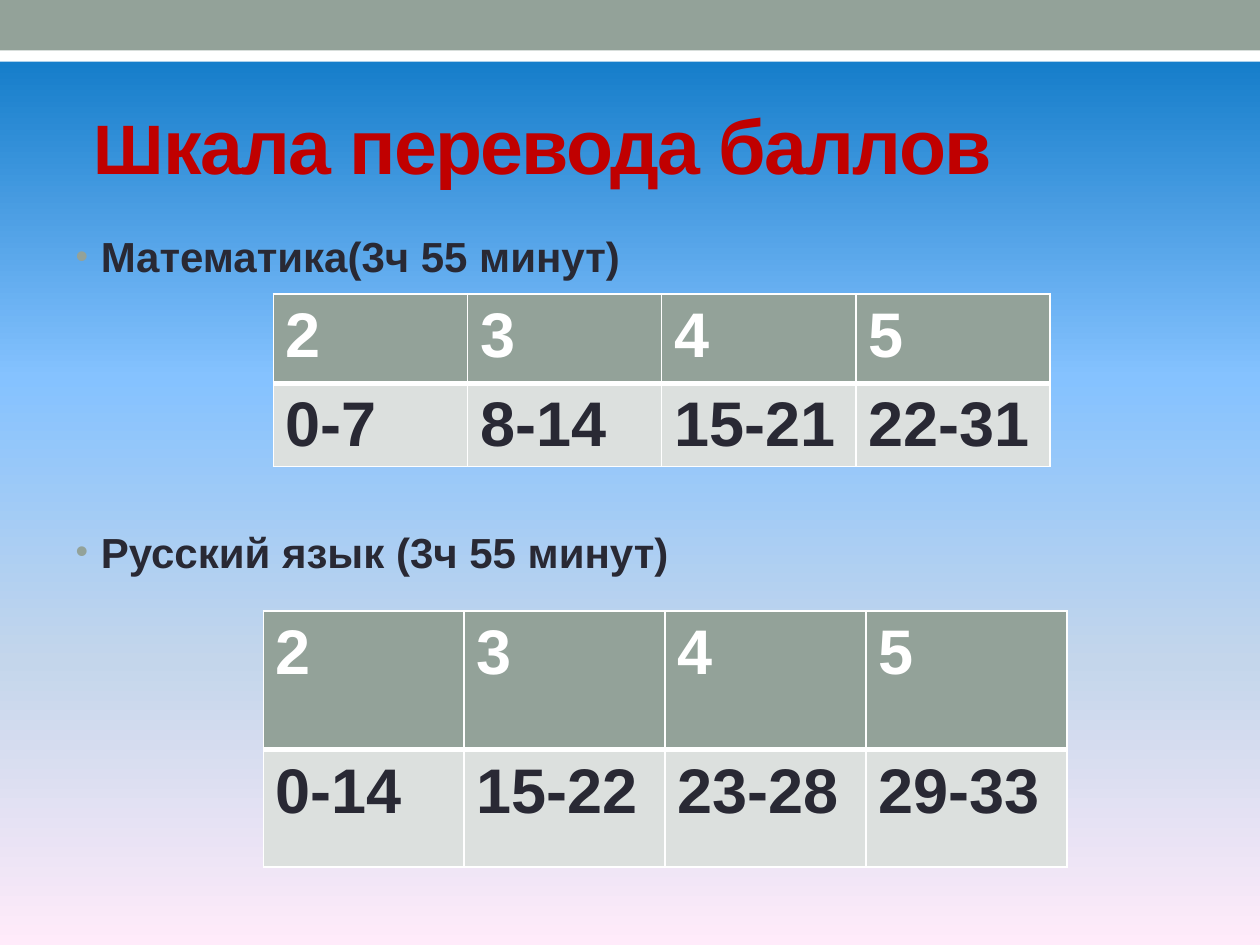
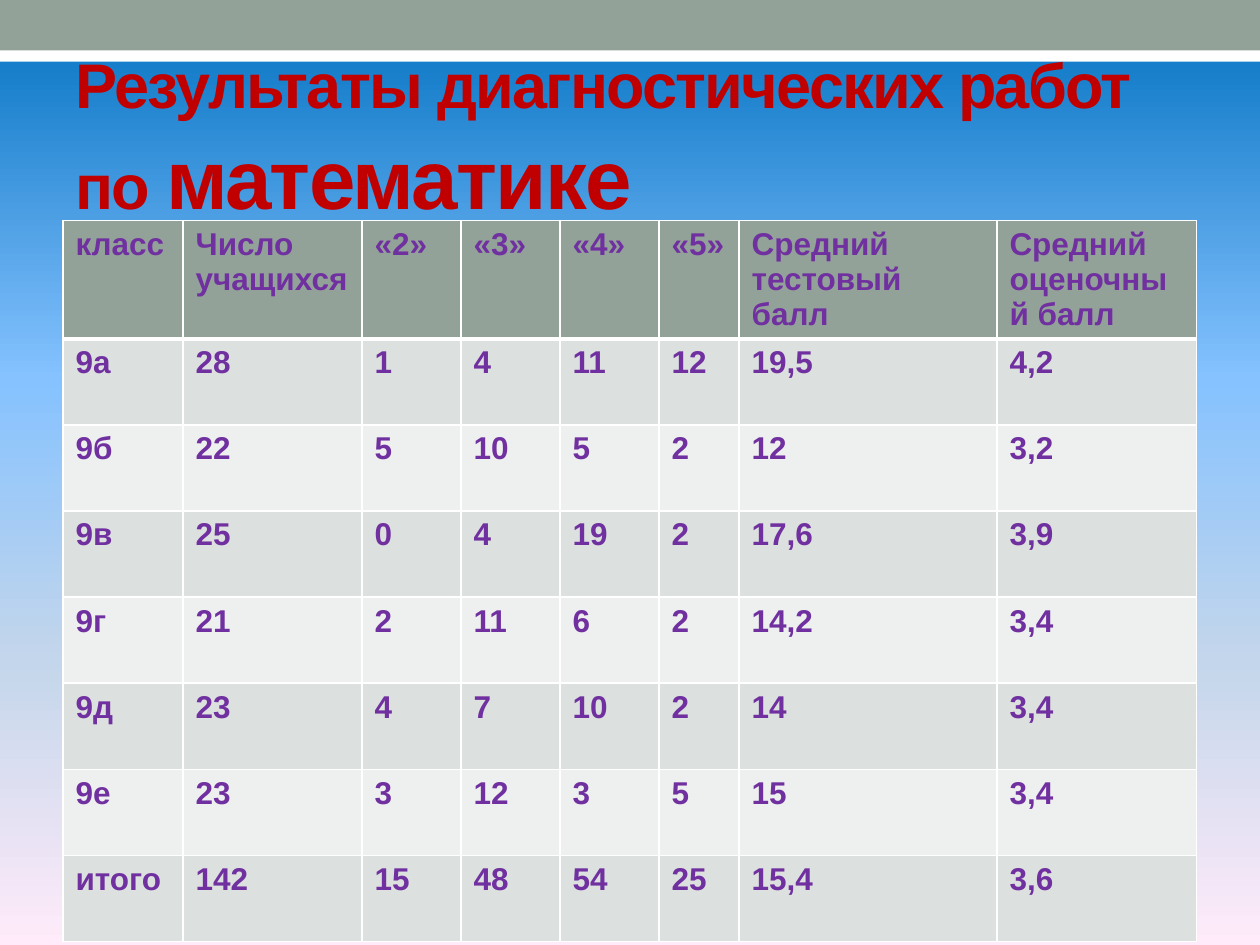
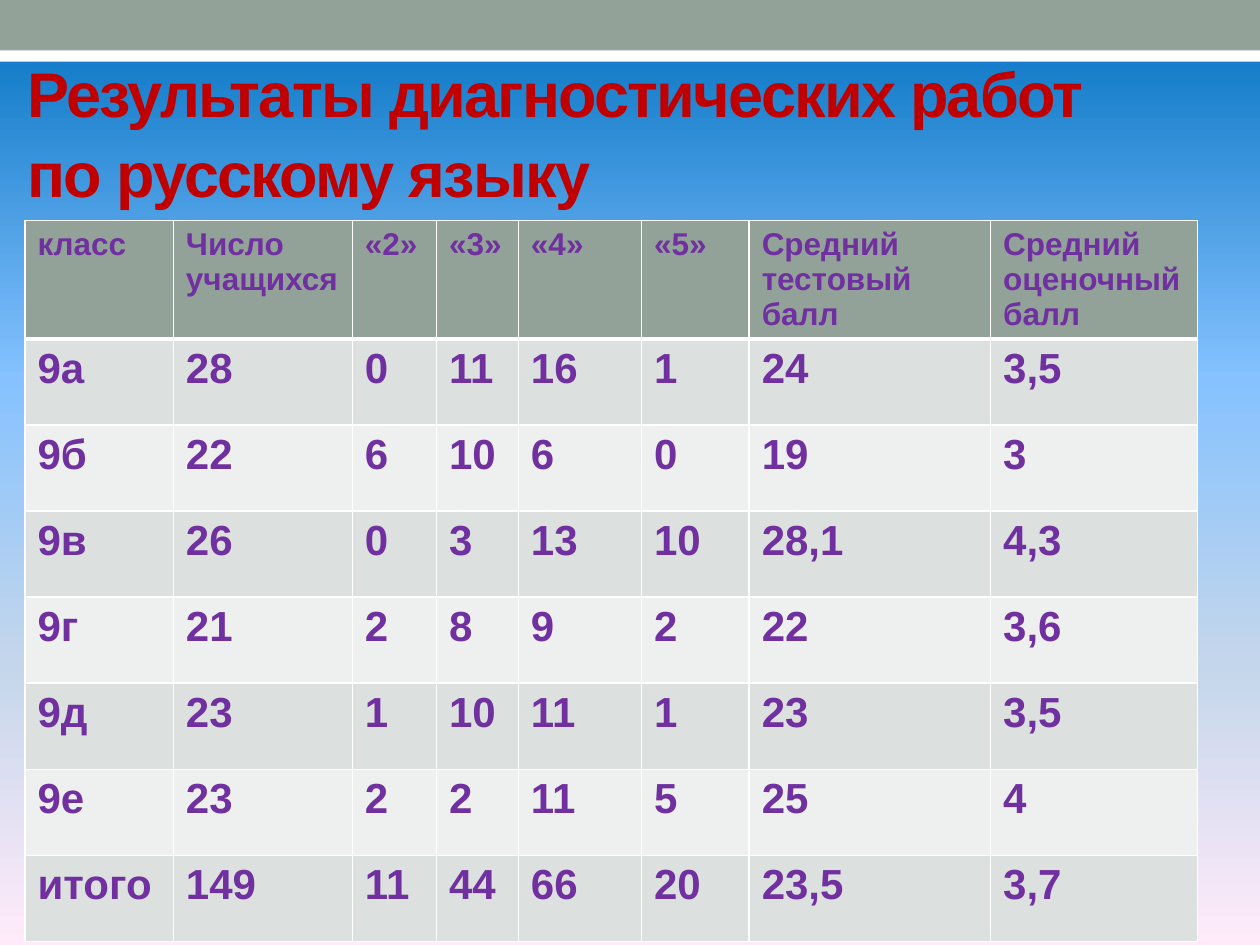
from copy import deepcopy

from lxml.etree import SubElement
from pptx import Presentation
from pptx.dml.color import RGBColor
from pptx.enum.shapes import MSO_SHAPE as Shape
from pptx.enum.text import MSO_ANCHOR as Anchor, MSO_AUTO_SIZE as AutoSize, PP_ALIGN as Align
from pptx.oxml.ns import qn
from pptx.util import Pt

FONT = "Arial"
SAGE, WHITE, RED, DARK, PURPLE = "93A299", "FFFFFF", "C00000", "292934", "7030A0"
BAND_FILLS = ("EEF0EF", "DCE0DE")
BACKGROUND_STOPS = ((0, "0070C0"), (40, "85C2FF"), (70, "C4D6EB"), (100, "FFEBFA"))
TITLE_ONLY, TITLE_AND_BODY = 5, 1

RESULT_HEADERS = ["класс", "Число учащихся", "«2»", "«3»", "«4»", "«5»",
                  "Средний тестовый балл", "Средний оценочный балл"]
MATH_RESULTS = [
    ["9а", "28", "1", "4", "11", "12", "19,5", "4,2"],
    ["9б", "22", "5", "10", "5", "2", "12", "3,2"],
    ["9в", "25", "0", "4", "19", "2", "17,6", "3,9"],
    ["9г", "21", "2", "11", "6", "2", "14,2", "3,4"],
    ["9д", "23", "4", "7", "10", "2", "14", "3,4"],
    ["9е", "23", "3", "12", "3", "5", "15", "3,4"],
    ["итого", "142", "15", "48", "54", "25", "15,4", "3,6"],
]
RUSSIAN_RESULTS = [
    ["9а", "28", "0", "11", "16", "1", "24", "3,5"],
    ["9б", "22", "6", "10", "6", "0", "19", "3"],
    ["9в", "26", "0", "3", "13", "10", "28,1", "4,3"],
    ["9г", "21", "2", "8", "9", "2", "22", "3,6"],
    ["9д", "23", "1", "10", "11", "1", "23", "3,5"],
    ["9е", "23", "2", "2", "11", "5", "25", "4"],
    ["итого", "149", "11", "44", "66", "20", "23,5", "3,7"],
]
MATH_COLUMNS = [68.6, 102.3, 56.6, 56.6, 56.6, 45.7, 147.4, 114.2]
RUSSIAN_COLUMNS = [84.8, 102.3, 48.1, 46.8, 70.4, 61.5, 138, 118.1]
RESULT_ROWS = [67.4] + [49.2] * 7


def color(value):
    return RGBColor.from_string(value)


def format_run(run, size, value):
    run.font.name = FONT
    run.font.size = Pt(size)
    run.font.bold = True
    run.font.color.rgb = color(value)


def place(shape, left, top, width, height):
    shape.left, shape.top, shape.width, shape.height = map(Pt, (left, top, width, height))


def set_background(master):
    fill = master.background.fill
    fill.gradient()
    fill.gradient_angle = 270
    stops = master.element.find(".//" + qn("a:gsLst"))
    stops.clear()
    for position, value in BACKGROUND_STOPS:
        stop = SubElement(stops, qn("a:gs"), pos=str(position * 1000))
        SubElement(stop, qn("a:srgbClr"), val=value)


def add_master_band(slide, master, order, top, height, value):
    band = slide.shapes.add_shape(Shape.RECTANGLE, 0, Pt(top), Pt(720), Pt(height))
    band.shadow.inherit = False
    band.fill.solid()
    band.fill.fore_color.rgb = color(value)
    band.line.fill.background()
    band.element.nvSpPr.cNvPr.set("id", str(100 + order))
    master.element.cSld.spTree.insert(2 + order, band.element)


def set_title(slide, box, parts):
    title = slide.shapes.title
    place(title, *box)
    frame = title.text_frame
    frame.auto_size = AutoSize.NONE
    frame.word_wrap = True
    frame.vertical_anchor = Anchor.MIDDLE
    paragraph = frame.paragraphs[0]
    paragraph.text = "".join(text for text, size in parts[:1])
    for text, size in parts[1:]:
        paragraph.add_run().text = text
    paragraph.alignment = Align.LEFT
    paragraph.line_spacing = 1.05
    for run, (text, size) in zip(paragraph.runs, parts):
        format_run(run, size, RED)
        run.font._element.set("spc", "-100")
    return paragraph


def end_with_break(paragraph):
    paragraph.add_line_break()
    properties = paragraph.runs[0].font._element
    line_break = paragraph._p.find(qn("a:br"))
    line_break.insert(0, deepcopy(properties))
    end = SubElement(paragraph._p, qn("a:endParaRPr"), sz=properties.get("sz"))
    SubElement(end, qn("a:latin"), typeface=FONT)


def set_bullet(paragraph):
    properties = paragraph._p.get_or_add_pPr()
    properties.set("marL", str(Pt(14.4)))
    properties.set("indent", str(-Pt(14.4)))
    bullet_color = SubElement(properties, qn("a:buClr"))
    SubElement(bullet_color, qn("a:srgbClr"), val=SAGE)
    SubElement(properties, qn("a:buSzPct"), val="85000")
    SubElement(properties, qn("a:buFont"), typeface=FONT)
    SubElement(properties, qn("a:buChar"), char="•")


def set_subjects(slide, box, subjects, gap):
    body = slide.placeholders[1]
    place(body, *box)
    frame = body.text_frame
    frame.auto_size = AutoSize.NONE
    frame.text = "\n".join(subjects)
    for index, paragraph in enumerate(frame.paragraphs):
        if index:
            paragraph.space_before = Pt(gap)
        set_bullet(paragraph)
        format_run(paragraph.runs[0], 24, DARK)


def set_borders(cell, row_index):
    widths = {"lnL": 1, "lnR": 1, "lnT": 3 if row_index == 1 else 1, "lnB": 1 if row_index else 3}
    properties = cell._tc.get_or_add_tcPr()
    for side, width in widths.items():
        line = SubElement(properties, qn("a:" + side), w=str(Pt(width)))
        fill = SubElement(line, qn("a:solidFill"))
        SubElement(fill, qn("a:srgbClr"), val=WHITE)


def add_score_table(slide, left, top, columns, heights, rows, header_style, body_style):
    frame = slide.shapes.add_table(len(rows), len(columns), Pt(left), Pt(top),
                                   Pt(sum(columns)), Pt(sum(heights)))
    table = frame.table
    for column, width in zip(table.columns, columns):
        column.width = Pt(width)
    for row_index, (row, height, texts) in enumerate(zip(table.rows, heights, rows)):
        row.height = Pt(height)
        size, value = body_style if row_index else header_style
        for cell, text in zip(row.cells, texts):
            cell.text = text
            format_run(cell.text_frame.paragraphs[0].runs[0], size, value)
            set_borders(cell, row_index)
            cell.fill.solid()
            cell.fill.fore_color.rgb = color(BAND_FILLS[row_index % 2] if row_index else SAGE)


def add_scale_slide(presentation):
    slide = presentation.slides.add_slide(presentation.slide_layouts[TITLE_AND_BODY])
    set_title(slide, (36, 41.8, 648, 77.8), [(" Ш", 40), ("кала перевода баллов", 44)])
    set_subjects(slide, (36, 128.2, 648, 368.6),
                 ["Математика(3ч 55 минут)", "Русский язык (3ч 55 минут)"], 140)
    grades = ["2", "3", "4", "5"]
    styles = (36, WHITE), (36, DARK)
    add_score_table(slide, 156.2, 168, [111] * 4, [51, 47.5],
                    [grades, ["0-7", "8-14", "15-21", "22-31"]], *styles)
    add_score_table(slide, 150.5, 349.2, [114.8] * 4, [79.2, 67],
                    [grades, ["0-14", "15-22", "23-28", "29-33"]], *styles)
    return slide


def add_results_slide(presentation, title_box, title_parts, left, columns, results, body_size):
    slide = presentation.slides.add_slide(presentation.slide_layouts[TITLE_ONLY])
    end_with_break(set_title(slide, title_box, title_parts))
    add_score_table(slide, left, 126, columns, RESULT_ROWS, [RESULT_HEADERS] + results,
                    (18, PURPLE), (body_size, PURPLE))


def main():
    presentation = Presentation()
    presentation.slide_width, presentation.slide_height = Pt(720), Pt(540)
    master = presentation.slide_master
    set_background(master)
    scale_slide = add_scale_slide(presentation)
    add_master_band(scale_slide, master, 0, 17.3, 18, WHITE)
    add_master_band(scale_slide, master, 1, 0, 28.8, SAGE)
    add_results_slide(presentation, (36, 77, 648, 42.5),
                      [("Результаты диагностических работ по ", 36), ("математике", 47.7)],
                      36, MATH_COLUMNS, MATH_RESULTS, 18)
    add_results_slide(presentation, (8.6, 69.1, 648, 54),
                      [("Результаты диагностических работ по русскому языку", 36)],
                      14.3, RUSSIAN_COLUMNS, RUSSIAN_RESULTS, 24)
    presentation.save("out.pptx")


if __name__ == "__main__":
    main()
